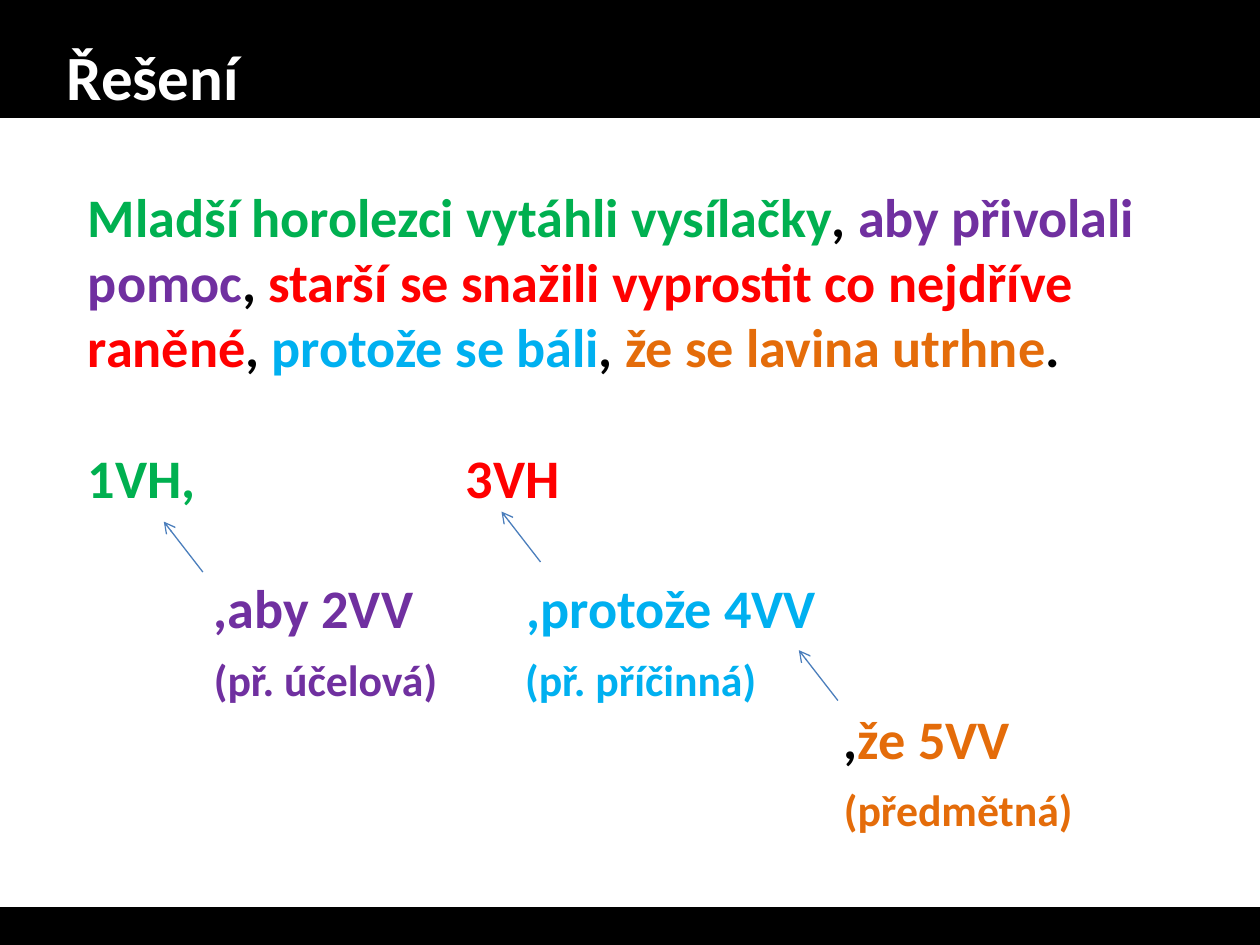
from typing import NamedTuple

from lxml.etree import SubElement
from pptx import Presentation
from pptx.dml.color import RGBColor
from pptx.enum.shapes import MSO_CONNECTOR, MSO_SHAPE
from pptx.enum.text import MSO_ANCHOR
from pptx.oxml.ns import qn
from pptx.util import Inches, Pt

BLACK, WHITE, ARROW_BLUE = "000000", "FFFFFF", "4B7EBC"
GREEN, PURPLE, RED, BLUE, ORANGE = "00B050", "7030A0", "FF0000", "00B0F0", "E46C0A"
FONT = "Calibri"
BODY_SIZE, NOTE_SIZE, LINE_HEIGHT = 31, 25, 37.3


class Span(NamedTuple):
    """A piece of text in one colour."""
    text: str
    color: str


class Line(NamedTuple):
    """A paragraph with its tab stops in inches."""
    spans: list[Span]
    tabs: tuple[float, ...] = ()
    size: int = BODY_SIZE
    gap_before: bool = False


class Arrow(NamedTuple):
    """The start point of an arrow that leads up and to the left."""
    x: float
    y: float


COMMA = Span(", ", BLACK)
LINES = [
    Line([
        Span("Mladší horolezci vytáhli vysílačky", GREEN), COMMA,
        Span("aby přivolali pomoc", PURPLE), COMMA,
        Span("starší se snažili vyprostit co nejdříve raněné", RED), COMMA,
        Span("protože se báli", BLUE), COMMA,
        Span("že se lavina utrhne", ORANGE), Span(".", BLACK),
    ]),
    Line([Span("1VH,\t", GREEN), Span("3VH", RED)], (3,), gap_before=True),
    Line([Span("\t,aby 2VV\t", PURPLE), Span(",protože 4VV", BLUE)], (1, 3.48), gap_before=True),
    Line([Span("\t(př. účelová)\t", PURPLE), Span("(př. příčinná)", BLUE)], (1, 3.47), NOTE_SIZE),
    Line([Span("\t,", BLACK), Span("že 5VV", ORANGE)], (6,)),
    Line([Span("\t(předmětná)", ORANGE)], (6,), NOTE_SIZE),
]
ARROWS = [Arrow(1.61, 4.54), Arrow(4.29, 4.46), Arrow(6.65, 5.56)]
ARROW_WIDTH, ARROW_HEIGHT = 0.31, 0.4


def rgb(color: str) -> RGBColor:
    """Turn a hex string into a colour."""
    return RGBColor.from_string(color)


def add_band(slide, top: float, height: float) -> None:
    """Draw a black band across the slide."""
    shape = slide.shapes.add_shape(
        MSO_SHAPE.RECTANGLE, Inches(0), Inches(top), Inches(10), Inches(height))
    shape.shadow.inherit = False
    shape.fill.solid()
    shape.fill.fore_color.rgb = rgb(BLACK)
    shape.line.color.rgb = rgb(BLACK)
    shape.line.width = Pt(2)


def add_text_frame(slide, left: float, top: float, width: float, height: float):
    """Add a wrapping text box and return its text frame."""
    box = slide.shapes.add_textbox(Inches(left), Inches(top), Inches(width), Inches(height))
    box.text_frame.word_wrap = True
    return box.text_frame


def add_run(paragraph, span: Span, size: float) -> None:
    """Append one bold run."""
    run = paragraph.add_run()
    run.text = span.text
    run.font.name = FONT
    run.font.size = Pt(size)
    run.font.bold = True
    run.font.color.rgb = rgb(span.color)


def fill_line(paragraph, line: Line) -> None:
    """Write a line with its spacing and tab stops."""
    paragraph.line_spacing = Pt(LINE_HEIGHT)
    if line.gap_before:
        paragraph.space_before = Pt(LINE_HEIGHT)
    for span in line.spans:
        add_run(paragraph, span, line.size)
    if line.tabs:
        tab_list = SubElement(paragraph._p.get_or_add_pPr(), qn("a:tabLst"))
        for position in line.tabs:
            SubElement(tab_list, qn("a:tab"), pos=str(Inches(position)), algn="l")


def add_arrow(slide, arrow: Arrow) -> None:
    """Draw a thin arrow with an open head."""
    connector = slide.shapes.add_connector(
        MSO_CONNECTOR.STRAIGHT, Inches(arrow.x), Inches(arrow.y),
        Inches(arrow.x - ARROW_WIDTH), Inches(arrow.y - ARROW_HEIGHT))
    connector.line.color.rgb = rgb(ARROW_BLUE)
    connector.line.width = Pt(0.75)
    SubElement(connector.line._get_or_add_ln(), qn("a:tailEnd"), type="arrow")
    SubElement(connector._element.spPr, qn("a:effectLst"))


def main() -> None:
    """Build and save the slide."""
    presentation = Presentation()
    presentation.slide_width, presentation.slide_height = Inches(10), Inches(7.5)
    slide = presentation.slides.add_slide(presentation.slide_layouts[6])

    add_band(slide, 0, 0.92)
    title = add_text_frame(slide, 0.43, 0.21, 8.5, 0.77)
    title.vertical_anchor = MSO_ANCHOR.MIDDLE
    add_run(title.paragraphs[0], Span("Řešení", WHITE), 36)
    add_band(slide, 7.21, 0.29)

    body = add_text_frame(slide, 0.6, 1.4, 9.13, 5.75)
    for index, line in enumerate(LINES):
        fill_line(body.add_paragraph() if index else body.paragraphs[0], line)
    for arrow in ARROWS:
        add_arrow(slide, arrow)

    presentation.save("out.pptx")


if __name__ == "__main__":
    main()
